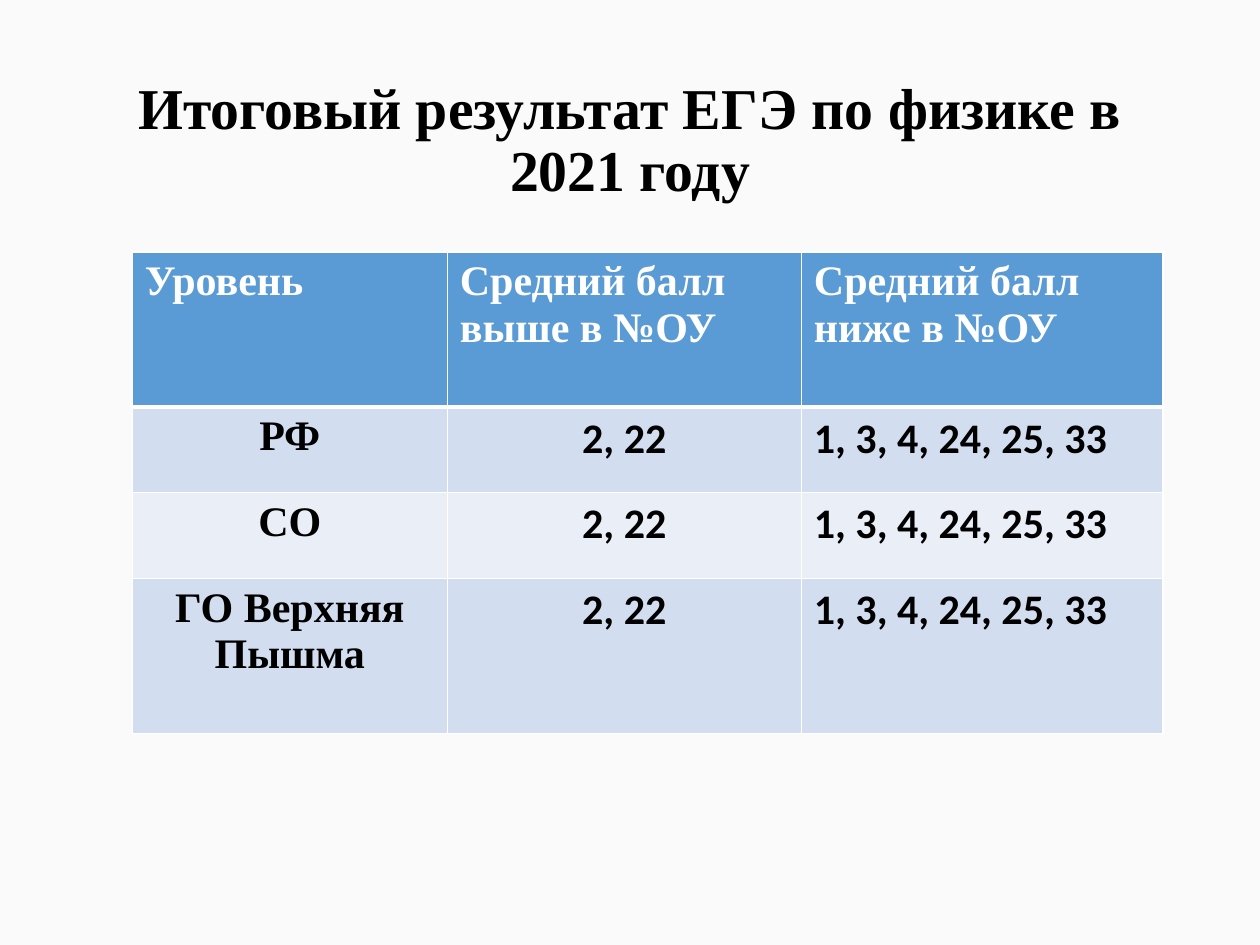
from dataclasses import dataclass

from lxml import etree
from pptx import Presentation
from pptx.dml.color import RGBColor
from pptx.enum.text import MSO_ANCHOR, MSO_AUTO_SIZE, PP_ALIGN
from pptx.oxml.ns import qn
from pptx.util import Inches, Pt

LEFT, CENTER = PP_ALIGN.LEFT, PP_ALIGN.CENTER
MIDDLE = MSO_ANCHOR.MIDDLE
NO_AUTOFIT = MSO_AUTO_SIZE.NONE
TITLE_ONLY = 5


@dataclass(frozen=True)
class Theme:
    background: str = "FAFAFA"
    text: str = "000000"
    white: str = "FFFFFF"
    header: str = "5B9BD5"
    bands: tuple = ("D2DEEF", "EAEFF7")
    serif: str = "Times New Roman"
    sans: str = "Calibri"
    title_size: int = 33
    table_size: int = 24
    border: int = 1
    header_border: int = 3


THEME = Theme()
TITLE = "Итоговый результат ЕГЭ по физике в 2021 году"
HEADERS = ("Уровень", "Средний балл выше в №ОУ", "Средний балл ниже в №ОУ")
LEVELS = ("РФ", "СО", "ГО Верхняя Пышма")
ABOVE = "2, 22"
BELOW = "1, 3, 4, 24, 25, 33"
COLUMN_WIDTHS = (2.5, 2.81, 2.87)
ROW_HEIGHTS = (1.23, 0.68, 0.68, 1.23)


def write_text(frame, text, font, size, color, align):
    para = frame.paragraphs[0]
    para.alignment = align
    span = para.add_run()
    span.text = text
    formats = {"name": font, "size": Pt(size), "bold": True}
    for name, value in formats.items():
        setattr(span.font, name, value)
    span.font.color.rgb = RGBColor.from_string(color)
    return para


def set_borders(cell, widths):
    """Draw white cell borders; widths are points for left, right, top, bottom."""
    properties = cell._tc.get_or_add_tcPr()
    for index, (side, width) in enumerate(zip("LRTB", widths)):
        line = etree.Element(qn(f"a:ln{side}"), w=str(Pt(width)))
        fill = etree.SubElement(line, qn("a:solidFill"))
        etree.SubElement(fill, qn("a:srgbClr"), val=THEME.white)
        properties.insert(index, line)


def add_title(page):
    title = page.shapes.title
    place = {"left": 0.69, "top": 0.4, "width": 8.62, "height": 1.45}
    for name, value in place.items():
        setattr(title, name, Inches(value))
    frame = title.text_frame
    formats = {"word_wrap": True, "auto_size": NO_AUTOFIT, "vertical_anchor": MIDDLE}
    for name, value in formats.items():
        setattr(frame, name, value)
    para = write_text(frame, TITLE, THEME.serif, THEME.title_size, THEME.text, CENTER)
    para.line_spacing = 0.9


def fill_cell(cell, text, row, column):
    is_header = row == 0
    fill = THEME.header if is_header else THEME.bands[(row - 1) % 2]
    cell.fill.solid()
    cell.fill.fore_color.rgb = RGBColor.from_string(fill)
    write_text(
        cell.text_frame,
        text,
        THEME.serif if is_header or column == 0 else THEME.sans,
        THEME.table_size,
        THEME.white if is_header else THEME.text,
        LEFT if is_header or column == 2 else CENTER,
    )
    thin, thick = THEME.border, THEME.header_border
    top = thick if row == 1 else thin
    bottom = thick if is_header else thin
    set_borders(cell, (thin, thin, top, bottom))


def add_results_table(page):
    rows = [HEADERS] + [(level, ABOVE, BELOW) for level in LEVELS]
    frame = page.shapes.add_table(
        len(rows), len(HEADERS), Inches(1.05), Inches(2),
        Inches(sum(COLUMN_WIDTHS)), Inches(sum(ROW_HEIGHTS)),
    )
    table = frame.table
    for column, width in zip(table.columns, COLUMN_WIDTHS):
        column.width = Inches(width)
    for row, height in zip(table.rows, ROW_HEIGHTS):
        row.height = Inches(height)
    for row, texts in enumerate(rows):
        for column, text in enumerate(texts):
            fill_cell(table.cell(row, column), text, row, column)


def main():
    deck = Presentation()
    deck.slide_width, deck.slide_height = Inches(10), Inches(7.5)
    page = deck.slides.add_slide(deck.slide_layouts[TITLE_ONLY])
    page.background.fill.solid()
    page.background.fill.fore_color.rgb = RGBColor.from_string(THEME.background)
    add_title(page)
    add_results_table(page)
    deck.save("out.pptx")


if __name__ == "__main__":
    main()
